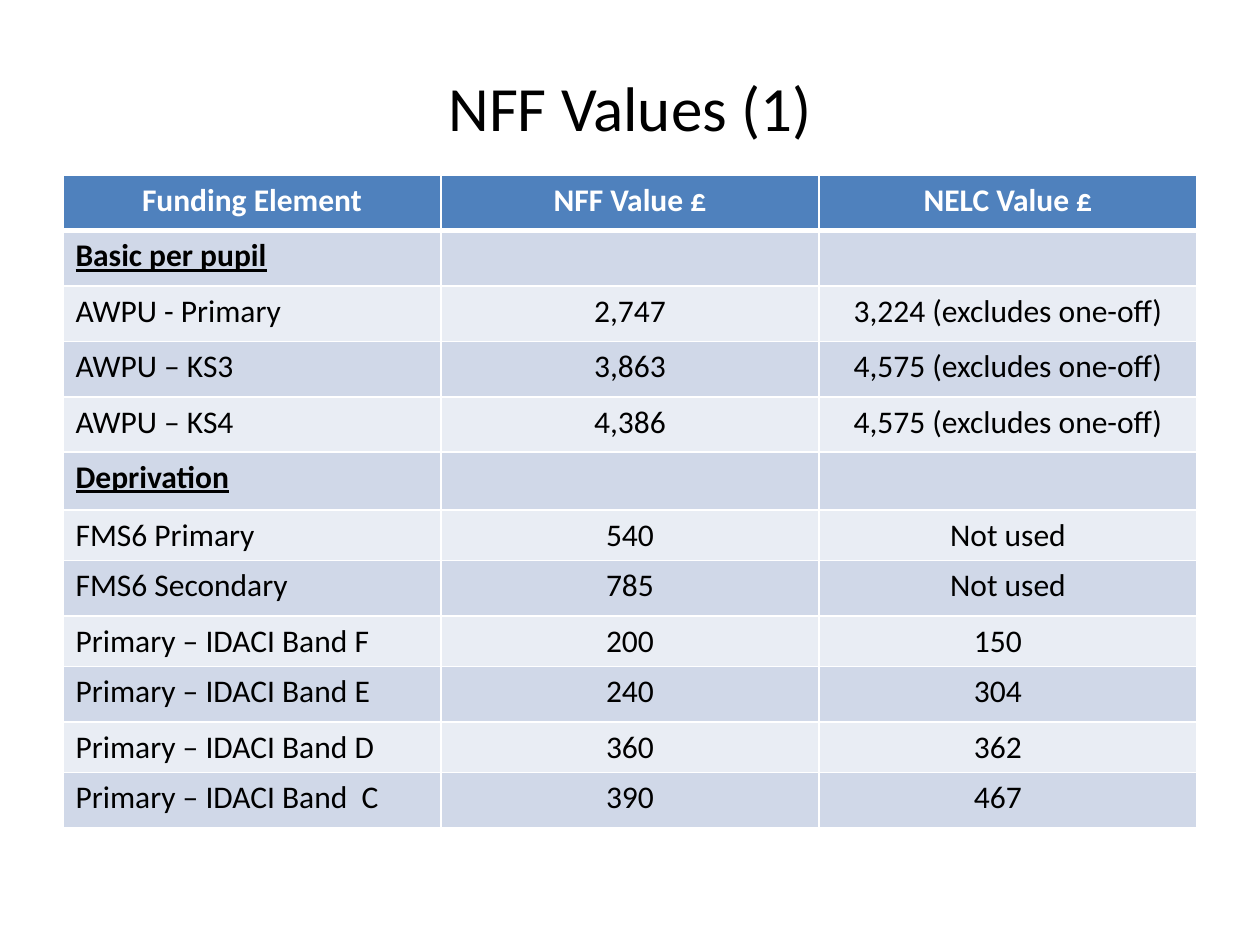
from lxml import etree
from pptx import Presentation
from pptx.dml.color import RGBColor
from pptx.enum import text
from pptx.oxml import ns
from pptx.util import Inches, Pt

TITLE = "NFF Values (1)"
HEADERS = ("Funding Element", "NFF Value £", "NELC Value £")
# Each section: heading, then rows of element, NFF value, NELC value
SECTIONS = [
    ("Basic per pupil", [
        ("AWPU - Primary", "2,747", "3,224 (excludes one-off)"),
        ("AWPU – KS3", "3,863", "4,575 (excludes one-off)"),
        ("AWPU – KS4", "4,386", "4,575 (excludes one-off)"),
    ]),
    ("Deprivation", [
        ("FMS6 Primary", "540", "Not used"),
        ("FMS6 Secondary", "785", "Not used"),
        ("Primary – IDACI Band F", "200", "150"),
        ("Primary – IDACI Band E", "240", "304"),
        ("Primary – IDACI Band D", "360", "362"),
        ("Primary – IDACI Band  C", "390", "467"),
    ]),
]
COLORS = {"header": "4F81BD", "odd": "D0D8E8", "even": "E9EDF4",
          "white": "FFFFFF", "black": "000000"}
ROW_HEIGHTS = (0.44, 0.44, 0.44, 0.44, 0.44, 0.46, 0.4, 0.44, 0.4, 0.44, 0.4, 0.44)
COLUMN_WIDTH = 3
BAND_INDENT = 1.23  # left margin of the NELC values for the IDACI bands


def write_text(frame, content, size=18, color="black", bold=False,
               underline=False, align=text.PP_ALIGN.LEFT):
    paragraph = frame.paragraphs[0]
    paragraph.alignment = align
    run = paragraph.add_run()
    run.text = content
    font = run.font
    font.name, font.size = "Calibri", Pt(size)
    font.bold, font.underline = bold, underline
    font.color.rgb = RGBColor.from_string(COLORS[color])


def set_borders(cell, bottom):
    """Draw white cell borders; they must come before the fill."""
    properties = cell._tc.get_or_add_tcPr()
    for index, (side, width) in enumerate(
            (("lnL", 1), ("lnR", 1), ("lnT", 1), ("lnB", bottom))):
        line = etree.Element(ns.qn(f"a:{side}"), w=str(Pt(width)))
        fill = etree.SubElement(line, ns.qn("a:solidFill"))
        etree.SubElement(fill, ns.qn("a:srgbClr"), val=COLORS["white"])
        properties.insert(index, line)


def style_cell(cell, fill, bottom=1):
    cell.fill.solid()
    cell.fill.fore_color.rgb = RGBColor.from_string(COLORS[fill])
    set_borders(cell, bottom)


def add_title(slide):
    box = slide.shapes.add_textbox(Inches(0.5), Inches(0.3), Inches(9), Inches(1.09))
    frame = box.text_frame
    frame.word_wrap = True
    frame.vertical_anchor = text.MSO_ANCHOR.MIDDLE
    write_text(frame, TITLE, size=36, align=text.PP_ALIGN.CENTER)


def add_values_table(slide):
    rows = [HEADERS]
    for heading, entries in SECTIONS:
        rows += [(heading, "", ""), *entries]
    headings = {heading for heading, _ in SECTIONS}

    table = slide.shapes.add_table(
        len(rows), len(HEADERS), Inches(0.5), Inches(1.39),
        Inches(COLUMN_WIDTH * len(HEADERS)), Inches(sum(ROW_HEIGHTS))).table
    for column in table.columns:
        column.width = Inches(COLUMN_WIDTH)

    for row_index, values in enumerate(rows):
        table.rows[row_index].height = Inches(ROW_HEIGHTS[row_index])
        is_header = row_index == 0
        is_heading = values[0] in headings
        fill = "header" if is_header else "odd" if row_index % 2 else "even"
        for column_index, value in enumerate(values):
            cell = table.cell(row_index, column_index)
            style_cell(cell, fill, bottom=3 if is_header else 1)
            if not value:
                continue
            indented = column_index == 2 and "IDACI" in values[0]
            if indented:
                cell.margin_left = Inches(BAND_INDENT)
            centered = is_header or (column_index > 0 and not indented)
            write_text(cell.text_frame, value,
                       color="white" if is_header else "black",
                       bold=is_header or is_heading, underline=is_heading,
                       align=text.PP_ALIGN.CENTER if centered else text.PP_ALIGN.LEFT)


def main():
    presentation = Presentation()
    presentation.slide_width, presentation.slide_height = Inches(10), Inches(7.5)
    slide = presentation.slides.add_slide(presentation.slide_layouts[6])
    add_title(slide)
    add_values_table(slide)
    presentation.save("out.pptx")


if __name__ == "__main__":
    main()
